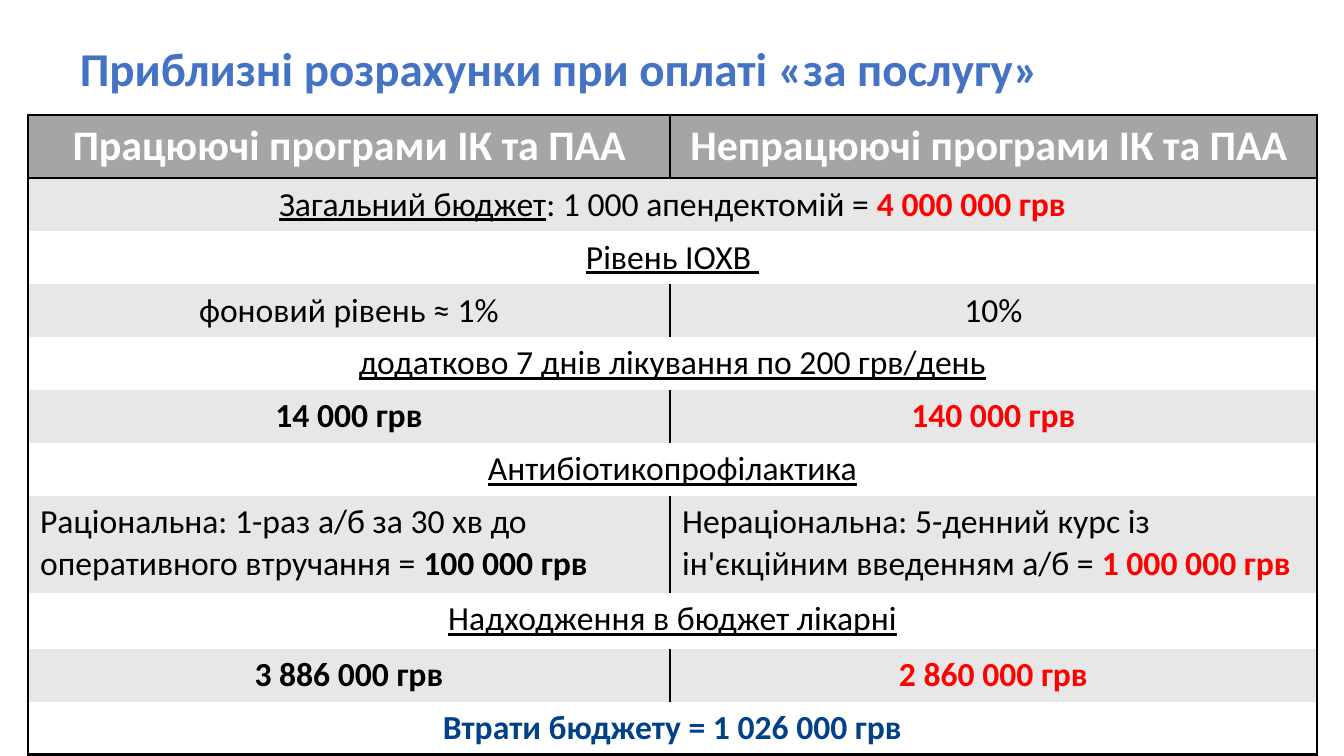
from dataclasses import dataclass
from typing import Optional

from lxml.etree import SubElement
from pptx import Presentation
from pptx.dml.color import RGBColor
from pptx.enum.text import PP_ALIGN as Align
from pptx.oxml.ns import qn
from pptx.util import Emu, Pt

FONT = "Calibri"
BLACK = RGBColor(0x00, 0x00, 0x00)
WHITE = RGBColor(0xFF, 0xFF, 0xFF)
RED = RGBColor(0xFF, 0x00, 0x00)
NAVY = RGBColor(0x00, 0x41, 0x88)
BLUE = RGBColor(0x44, 0x72, 0xC4)
HEADER_GRAY = RGBColor(0xA5, 0xA5, 0xA5)
BAND_GRAY = RGBColor(0xE7, 0xE7, 0xE7)

THIN, THICK = 1, 2
ROW_HEIGHT = 53
COLUMN_WIDTHS = (642, 647)


def px(count: int) -> Emu:
    return Emu(count * 7557)


@dataclass(frozen=True)
class Span:
    text: str
    color: RGBColor = BLACK
    bold: bool = False
    underline: bool = False
    size: int = 20


@dataclass(frozen=True)
class Row:
    """One table row; a single cell is merged across both columns."""
    cells: tuple[tuple[Span, ...], ...]
    height: int = ROW_HEIGHT
    align: Align = Align.CENTER


def header(text: str) -> tuple[Span, ...]:
    return (Span(text, WHITE, bold=True, size=25),)


def heading_row(text: str, height: int = ROW_HEIGHT) -> Row:
    return Row(((Span(text, underline=True),),), height)


def amounts_row(working: str, failing: str) -> Row:
    return Row(((Span(working, bold=True),), (Span(failing, RED, bold=True),)))


ROWS = (
    Row((header("Працюючі програми ІК та ПАА"),
         header("Непрацюючі програми ІК та ПАА ")), height=63),
    Row(((Span("Загальний бюджет", underline=True),
          Span(": 1 000 апендектомій = "),
          Span("4 000 000 грв", RED, bold=True)),)),
    heading_row("Рівень ІОХВ "),
    Row(((Span("фоновий рівень ≈ 1%"),), (Span("10%"),))),
    heading_row("додатково 7 днів лікування по 200 грв/день"),
    amounts_row("14 000 грв", "140 000 грв"),
    heading_row("Антибіотикопрофілактика"),
    Row(((Span("Раціональна: 1-раз а/б за 30 хв до оперативного втручання = "),
          Span("100 000 грв", bold=True)),
         (Span("Нераціональна: 5-денний курс із ін'єкційним введенням а/б = "),
          Span("1 000 000 грв", RED, bold=True))),
        height=97, align=Align.LEFT),
    heading_row("Надходження в бюджет лікарні", height=56),
    amounts_row("3 886 000 грв", "2 860 000 грв"),
    Row(((Span("Втрати бюджету = 1 026 000 грв", NAVY, bold=True),),)),
)


def add_text(para, text: str, *, color: RGBColor, bold: bool,
             underline: bool, size: int) -> None:
    run = para.add_run()
    run.text = text
    font = run.font
    font.name, font.size = FONT, Pt(size)
    font.bold, font.underline = bold, underline
    font.color.rgb = color


def write_spans(para, spans: tuple[Span, ...], align: Align) -> None:
    para.alignment = align
    for span in spans:
        add_text(para, span.text, color=span.color, bold=span.bold,
                 underline=span.underline, size=span.size)


def set_borders(cell, widths: dict[str, Optional[int]]) -> None:
    """Set the L, R, T and B borders in points; None hides the border."""
    properties = cell._tc.get_or_add_tcPr()
    for side, width in widths.items():
        line = SubElement(properties, qn(f"a:ln{side}"))
        if width is None:
            SubElement(line, qn("a:noFill"))
            continue
        line.set("w", str(Pt(width)))
        fill = SubElement(line, qn("a:solidFill"))
        SubElement(fill, qn("a:srgbClr")).set("val", str(BLACK))


def row_fill(index: int) -> RGBColor:
    if index == 0:
        return HEADER_GRAY
    return BAND_GRAY if index % 2 else WHITE


def add_title(slide) -> None:
    box = slide.shapes.add_textbox(px(68), px(34), px(1210), px(69))
    box.text_frame.word_wrap = True
    title = Span("Приблизні розрахунки при оплаті «за послугу»",
                 BLUE, bold=True, size=28)
    write_spans(box.text_frame.paragraphs[0], (title,), Align.LEFT)


def add_budget_table(slide) -> None:
    table = slide.shapes.add_table(
        len(ROWS), len(COLUMN_WIDTHS), px(28), px(115),
        px(sum(COLUMN_WIDTHS)), px(sum(row.height for row in ROWS))).table
    table.horz_banding = False
    for column, width in zip(table.columns, COLUMN_WIDTHS):
        column.width = px(width)

    last = len(ROWS) - 1
    for index, row in enumerate(ROWS):
        table.rows[index].height = px(row.height)
        left, right = table.cell(index, 0), table.cell(index, 1)
        merged = len(row.cells) == 1
        middle = None if merged else THIN
        top = THICK if index in (0, 1) else None
        bottom = THICK if index in (0, last) else None
        set_borders(left, {"L": THIN, "R": THIN if merged else middle,
                           "T": top, "B": bottom})
        set_borders(right, {"L": middle, "R": THIN, "T": top, "B": bottom})
        for cell in (left, right):
            cell.fill.solid()
            cell.fill.fore_color.rgb = row_fill(index)
        if merged:
            left.merge(right)
        for cell, spans in zip((left, right), row.cells):
            write_spans(cell.text_frame.paragraphs[0], spans, row.align)


def main() -> None:
    deck = Presentation()
    deck.slide_width, deck.slide_height = px(1344), px(756)
    page = deck.slides.add_slide(deck.slide_layouts[6])
    add_title(page)
    add_budget_table(page)
    deck.save("out.pptx")


if __name__ == "__main__":
    main()
